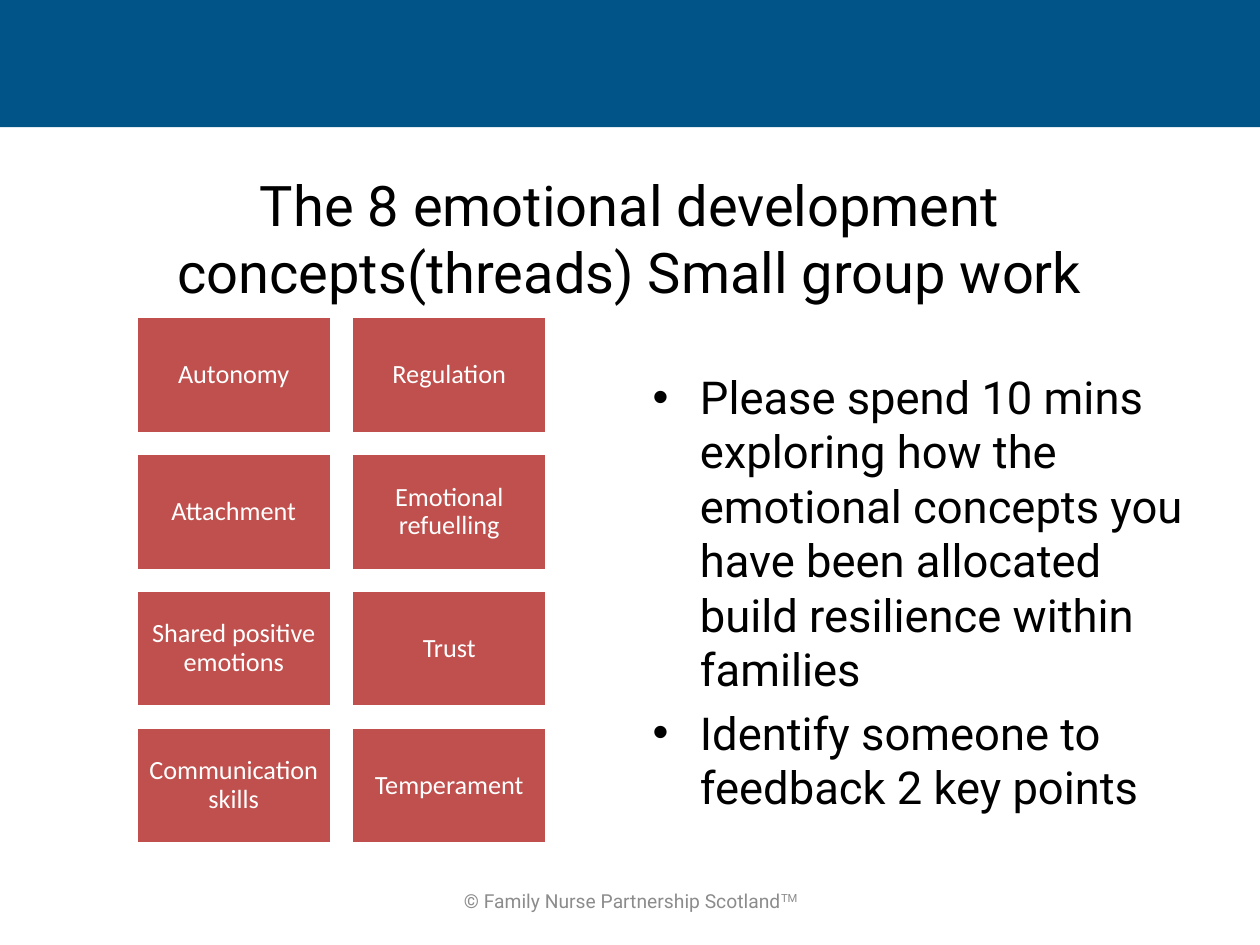
from pptx import Presentation
from pptx.dml.color import RGBColor
from pptx.enum.shapes import MSO_SHAPE
from pptx.enum.text import MSO_ANCHOR, MSO_AUTO_SIZE, PP_ALIGN
from pptx.util import Inches, Pt

TITLE = "The 8 emotional development concepts(threads) Small group work"
CONCEPTS = [
    ("Autonomy", "Regulation"),
    ("Attachment", "Emotional refuelling"),
    ("Shared positive emotions", "Trust"),
    ("Communication skills", "Temperament"),
]
TASKS = [
    "Please spend 10 mins exploring how the emotional concepts you have been "
    "allocated build resilience within families",
    "Identify someone to feedback 2 key points",
]
FOOTER = ("© Family Nurse Partnership Scotland", "TM")

GRID_LEFT, GRID_TOP = 1.08, 2.51
TILE_WIDTH, TILE_HEIGHT = 1.55, 0.93
COLUMN_STEP, ROW_STEP = 1.71, 1.087
TILE_INSET = 0.06


def color(value):
    return RGBColor.from_string(value)


def place(shape, left, top, width, height):
    shape.left, shape.top = Inches(left), Inches(top)
    shape.width, shape.height = Inches(width), Inches(height)


def format_text(frame, name, size, value, align, anchor):
    frame.word_wrap = True
    frame.auto_size = MSO_AUTO_SIZE.NONE
    frame.vertical_anchor = anchor
    for para in frame.paragraphs:
        para.alignment = align
        for span in para.runs:
            span.font.name = name
            span.font.size = Pt(size)
            span.font.color.rgb = color(value)


def add_rectangle(shapes, left, top, width, height, fill):
    box = shapes.add_shape(MSO_SHAPE.RECTANGLE, Inches(left), Inches(top), Inches(width), Inches(height))
    box.shadow.inherit = False
    box.fill.solid()
    box.fill.fore_color.rgb = color(fill)
    box.line.fill.background()
    return box


def add_tile(shapes, text, row, column):
    left = GRID_LEFT + column * COLUMN_STEP
    top = GRID_TOP + row * ROW_STEP
    tile = add_rectangle(shapes, left, top, TILE_WIDTH, TILE_HEIGHT, "C0504D")
    tile.line.color.rgb = color("FFFFFF")
    tile.line.width = Pt(2)
    frame = tile.text_frame
    frame.margin_left = frame.margin_right = Inches(TILE_INSET)
    frame.margin_top = frame.margin_bottom = Inches(TILE_INSET)
    frame.text = text
    frame.paragraphs[0].line_spacing = 0.9
    format_text(frame, "Calibri", 15, "FFFFFF", PP_ALIGN.CENTER, MSO_ANCHOR.MIDDLE)


def add_footer(page):
    box = page.shapes.add_textbox(Inches(3.42), Inches(6.95), Inches(3.17), Inches(0.4))
    para = box.text_frame.paragraphs[0]
    for text in FOOTER:
        span = para.add_run()
        span.text = text
    span.font._element.set("baseline", "30000")
    format_text(box.text_frame, "Roboto", 11, "8C8C8C", PP_ALIGN.CENTER, MSO_ANCHOR.MIDDLE)


def main():
    deck = Presentation()
    deck.slide_width, deck.slide_height = Inches(10), Inches(7.5)
    page = deck.slides.add_slide(deck.slide_layouts[1])

    add_rectangle(page.shapes, 0, 0, 10, 1.01, "005488")

    title = page.shapes.title
    place(title, 0.5, 1.26, 9, 1.25)
    title.text_frame.text = TITLE
    format_text(title.text_frame, "Roboto", 32, "000000", PP_ALIGN.CENTER, MSO_ANCHOR.MIDDLE)

    group = page.shapes.add_group_shape()
    for row, names in enumerate(CONCEPTS):
        for column, name in enumerate(names):
            add_tile(group.shapes, name, row, column)

    body = page.placeholders[1]
    place(body, 5.08, 2.88, 4.42, 3.82)
    body.text_frame.text = "\n".join(TASKS)
    format_text(body.text_frame, "Roboto", 25.9, "000000", PP_ALIGN.LEFT, MSO_ANCHOR.TOP)
    body.text_frame.paragraphs[0].space_before = Pt(0)

    add_footer(page)
    deck.save("out.pptx")


if __name__ == "__main__":
    main()
